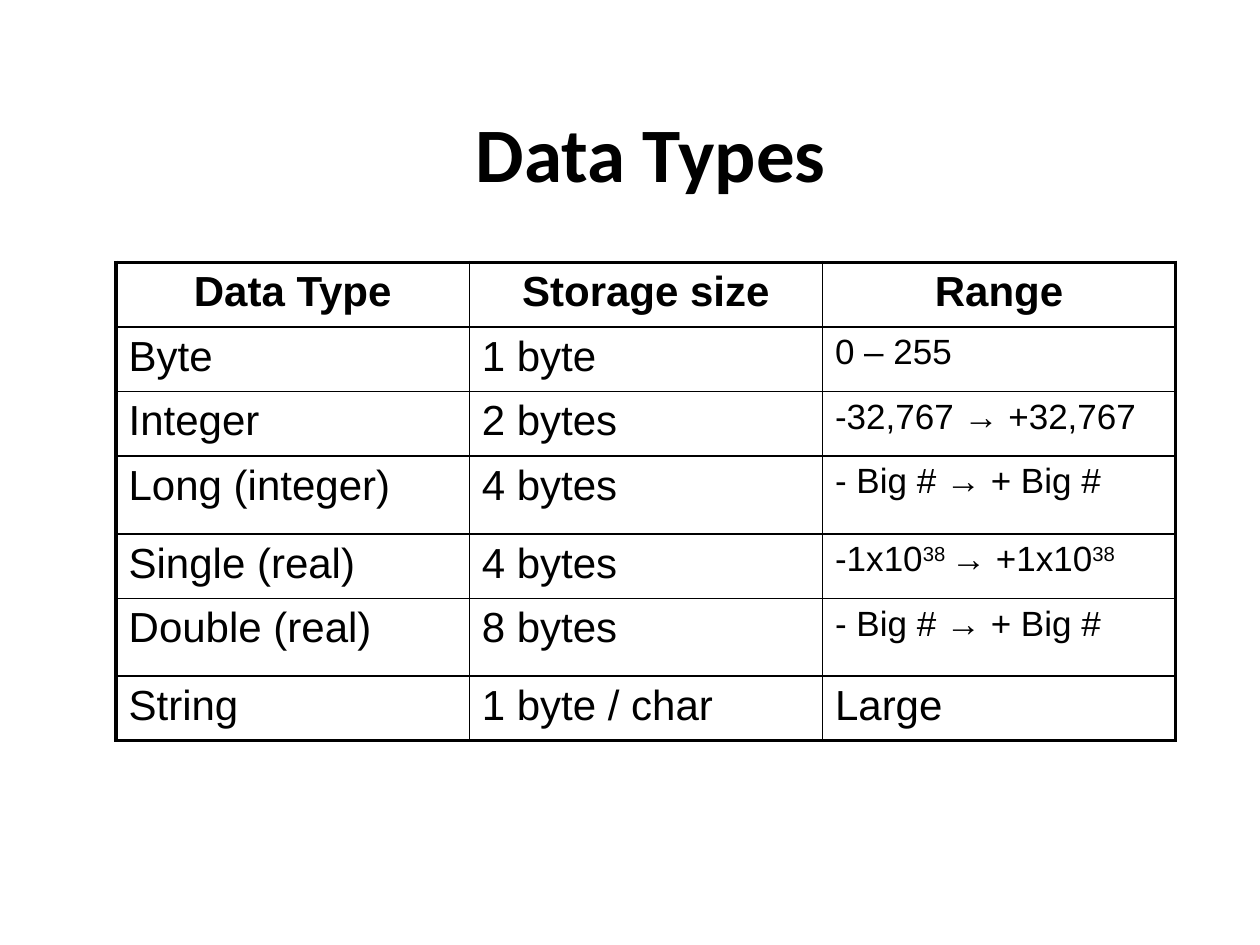
from dataclasses import dataclass

from lxml import etree
from pptx import Presentation
from pptx import util as u
from pptx.dml.color import RGBColor
from pptx.enum import text
from pptx.oxml import ns


@dataclass(frozen=True)
class Theme:
    ink: str = "000000"
    heading_font: str = "Calibri"
    body_font: str = "Arial"
    title_size: int = 44
    body_size: int = 24
    range_size: int = 20
    superscript: int = 30
    space_before: int = 20
    outer_line: float = 2.25
    inner_line: float = 1


@dataclass(frozen=True)
class DataType:
    name: str
    storage: str
    span: str
    height: float = 1.3
    span_size: int = 20


THEME = Theme()
LEFT, CENTER = text.PP_ALIGN.LEFT, text.PP_ALIGN.CENTER
HEADINGS = ("Data Type", "Storage size", "Range")
HEADING_HEIGHT = 1.3
COLUMN_WIDTH = 7.12
DATA_TYPES = (
    DataType("Byte", "1 byte", "0 – 255"),
    DataType("Integer", "2 bytes", "-32,767 → +32,767"),
    DataType("Long (integer)", "4 bytes", "- Big # → + Big #", height=1.57),
    DataType("Single (real)", "4 bytes", "-1x10^38 ^→ +1x10^38^"),
    DataType("Double (real)", "8 bytes", "- Big # → + Big #", height=1.57),
    DataType("String", "1 byte / char", "Large", span_size=THEME.body_size),
)


def write(frame, words: str, *, size: int = THEME.body_size, font: str = THEME.body_font,
          bold: bool = False, align=LEFT, space_before: int = 0) -> None:
    """Text between a pair of ^ marks is set as superscript."""
    paragraph = frame.paragraphs[0]
    paragraph.alignment = align
    if space_before:
        spacing = etree.SubElement(paragraph._p.get_or_add_pPr(), ns.qn("a:spcBef"))
        etree.SubElement(spacing, ns.qn("a:spcPct"), val=str(space_before * 1000))
    for position, piece in enumerate(words.split("^")):
        if not piece:
            continue
        run = paragraph.add_run()
        run.text = piece
        run.font.size = u.Pt(size)
        run.font.name = font
        run.font.bold = bold
        run.font.color.rgb = RGBColor.from_string(THEME.ink)
        if position % 2:
            run._r.get_or_add_rPr().set("baseline", str(THEME.superscript * 1000))


def draw_borders(cell, outer: dict[str, bool]) -> None:
    properties = cell._tc.get_or_add_tcPr()
    for index, (side, is_outer) in enumerate(outer.items()):
        width = THEME.outer_line if is_outer else THEME.inner_line
        line = etree.Element(ns.qn(f"a:ln{side}"), w=str(u.Pt(width)))
        fill = etree.SubElement(line, ns.qn("a:solidFill"))
        etree.SubElement(fill, ns.qn("a:srgbClr"), val=THEME.ink)
        properties.insert(index, line)


def draw_title(slide, words: str) -> None:
    title = slide.shapes.add_textbox(u.Cm(2.11), u.Cm(1.47), u.Cm(22.02), u.Cm(3.18))
    title.text_frame.word_wrap = True
    title.text_frame.vertical_anchor = text.MSO_ANCHOR.MIDDLE
    write(title.text_frame, words, size=THEME.title_size, font=THEME.heading_font,
          bold=True, align=CENTER)


def draw_data_types(slide, data_types: tuple[DataType, ...]) -> None:
    heights = [HEADING_HEIGHT] + [kind.height for kind in data_types]
    row_count, column_count = len(heights), len(HEADINGS)
    table = slide.shapes.add_table(
        row_count, column_count, u.Cm(2.34), u.Cm(5.29),
        u.Cm(COLUMN_WIDTH * column_count), u.Cm(sum(heights))).table
    table.first_row = False
    table.horz_banding = False
    for column in table.columns:
        column.width = u.Cm(COLUMN_WIDTH)
    for row, height in zip(table.rows, heights):
        row.height = u.Cm(height)

    for c, heading in enumerate(HEADINGS):
        write(table.cell(0, c).text_frame, heading, bold=True, align=CENTER,
              space_before=THEME.space_before)
    for r, kind in enumerate(data_types, start=1):
        sizes = (THEME.body_size, THEME.body_size, kind.span_size)
        for c, words in enumerate((kind.name, kind.storage, kind.span)):
            write(table.cell(r, c).text_frame, words, size=sizes[c],
                  space_before=THEME.space_before)

    for r in range(row_count):
        for c in range(column_count):
            cell = table.cell(r, c)
            cell.fill.background()
            draw_borders(cell, {"L": c == 0, "R": c == column_count - 1,
                                "T": r == 0, "B": r == row_count - 1})


def main() -> None:
    deck = Presentation()
    deck.slide_width, deck.slide_height = u.Cm(25.4), u.Cm(19.05)
    slide = deck.slides.add_slide(deck.slide_layouts[6])
    draw_title(slide, "Data Types")
    draw_data_types(slide, DATA_TYPES)
    deck.save("out.pptx")


if __name__ == "__main__":
    main()
